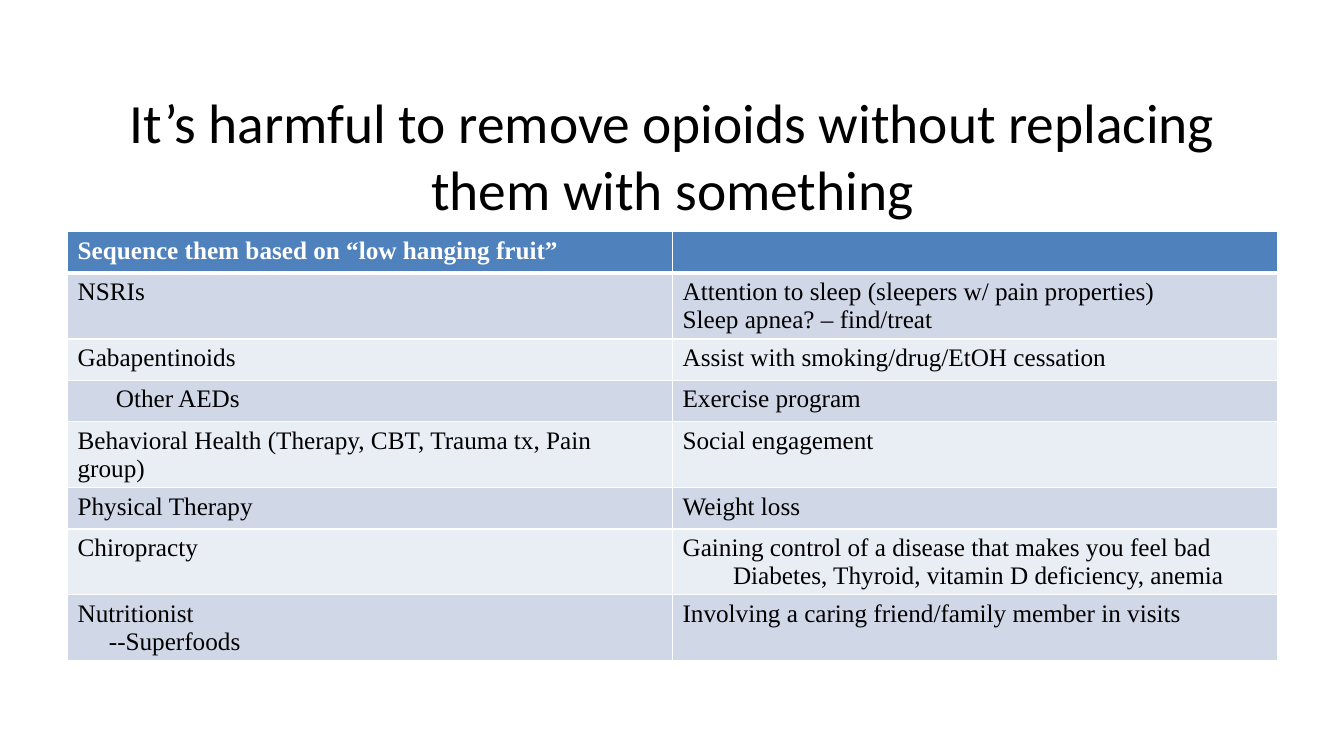
from dataclasses import dataclass

from lxml import etree
from pptx import Presentation
from pptx.dml.color import RGBColor
from pptx.enum.text import MSO_ANCHOR, MSO_AUTO_SIZE, PP_ALIGN
from pptx.oxml.ns import qn
from pptx.util import Inches, Pt

CENTER = PP_ALIGN.CENTER
MIDDLE = MSO_ANCHOR.MIDDLE
NO_AUTOFIT = MSO_AUTO_SIZE.NONE

BLACK = RGBColor(0x00, 0x00, 0x00)
WHITE = RGBColor(0xFF, 0xFF, 0xFF)
HEADER_BLUE = RGBColor(0x4F, 0x81, 0xBD)
BAND_DARK = RGBColor(0xD0, 0xD8, 0xE8)
BAND_LIGHT = RGBColor(0xE9, 0xED, 0xF4)

TITLE_FONT = "Calibri"
TABLE_FONT = "Times New Roman"
ROW_HEIGHT = Inches(0.41)
THIN, THICK = Pt(1), Pt(3)


@dataclass(frozen=True)
class Line:
    text: str
    indent: float = 0


ROWS: list[tuple[list[Line], list[Line]]] = [
    ([Line("Sequence them based on “low hanging fruit”")], []),
    ([Line("NSRIs")],
     [Line("Attention to sleep (sleepers w/ pain properties)"),
      Line("Sleep apnea? – find/treat")]),
    ([Line("Gabapentinoids")], [Line("Assist with smoking/drug/EtOH cessation")]),
    ([Line("Other AEDs", 0.38)], [Line("Exercise program")]),
    ([Line("Behavioral Health (Therapy, CBT, Trauma tx, Pain group)")],
     [Line("Social engagement")]),
    ([Line("Physical Therapy")], [Line("Weight loss")]),
    ([Line("Chiropracty")],
     [Line("Gaining control of a disease that makes you feel bad"),
      Line("Diabetes, Thyroid, vitamin D deficiency, anemia", 0.5)]),
    ([Line("Nutritionist"), Line("--Superfoods", 0.31)],
     [Line("Involving a caring friend/family member in visits")]),
]


def write_text(paragraph, text: str, *, font: str, size: float, color: RGBColor,
               bold: bool = False, indent: float = 0, align=None) -> None:
    if indent:
        paragraph._p.get_or_add_pPr().set("marL", str(Inches(indent)))
    if align is not None:
        paragraph.alignment = align
    run = paragraph.add_run()
    run.text = text
    run.font.name = font
    run.font.size = Pt(size)
    run.font.bold = bold
    run.font.color.rgb = color


def set_borders(cell, *, top: int, bottom: int) -> None:
    properties = cell._tc.get_or_add_tcPr()
    widths = {"a:lnL": THIN, "a:lnR": THIN, "a:lnT": top, "a:lnB": bottom}
    for tag, width in widths.items():
        border = etree.SubElement(properties, qn(tag), w=str(width))
        fill = etree.SubElement(border, qn("a:solidFill"))
        etree.SubElement(fill, qn("a:srgbClr"), val=str(WHITE))


def fill_cell(cell, lines: list[Line], row_index: int) -> None:
    is_header = row_index == 0
    set_borders(cell, top=THICK if row_index == 1 else THIN,
                bottom=THICK if is_header else THIN)
    cell.fill.solid()
    band = BAND_DARK if row_index % 2 else BAND_LIGHT
    cell.fill.fore_color.rgb = HEADER_BLUE if is_header else band
    frame = cell.text_frame
    for index, line in enumerate(lines):
        paragraph = frame.add_paragraph() if index else frame.paragraphs[0]
        write_text(paragraph, line.text, font=TABLE_FONT, size=18, bold=is_header,
                   color=WHITE if is_header else BLACK, indent=line.indent)


def add_title(slide) -> None:
    title = slide.shapes.title
    title.left, title.top = Inches(0.67), Inches(0.91)
    title.width, title.height = Inches(12), Inches(1.25)
    frame = title.text_frame
    frame.word_wrap = True
    frame.auto_size = NO_AUTOFIT
    frame.vertical_anchor = MIDDLE
    write_text(frame.paragraphs[0],
               "It’s harmful to remove opioids without replacing them with something",
               font=TITLE_FONT, size=39.6, color=BLACK, align=CENTER)


def add_options_table(slide) -> None:
    shape = slide.shapes.add_table(len(ROWS), 2, Inches(0.67), Inches(2.3),
                                   Inches(12), ROW_HEIGHT * len(ROWS))
    for row_index, row in enumerate(ROWS):
        for column_index, lines in enumerate(row):
            fill_cell(shape.table.cell(row_index, column_index), lines, row_index)
    # Rows with two lines grow past the minimum height
    shape.height = Inches(4.13)


def main() -> None:
    presentation = Presentation()
    presentation.slide_width = Inches(13.33)
    presentation.slide_height = Inches(7.5)
    slide = presentation.slides.add_slide(presentation.slide_layouts[5])

    # Title
    add_title(slide)

    # Table of replacement options
    add_options_table(slide)

    presentation.save("out.pptx")


if __name__ == "__main__":
    main()
